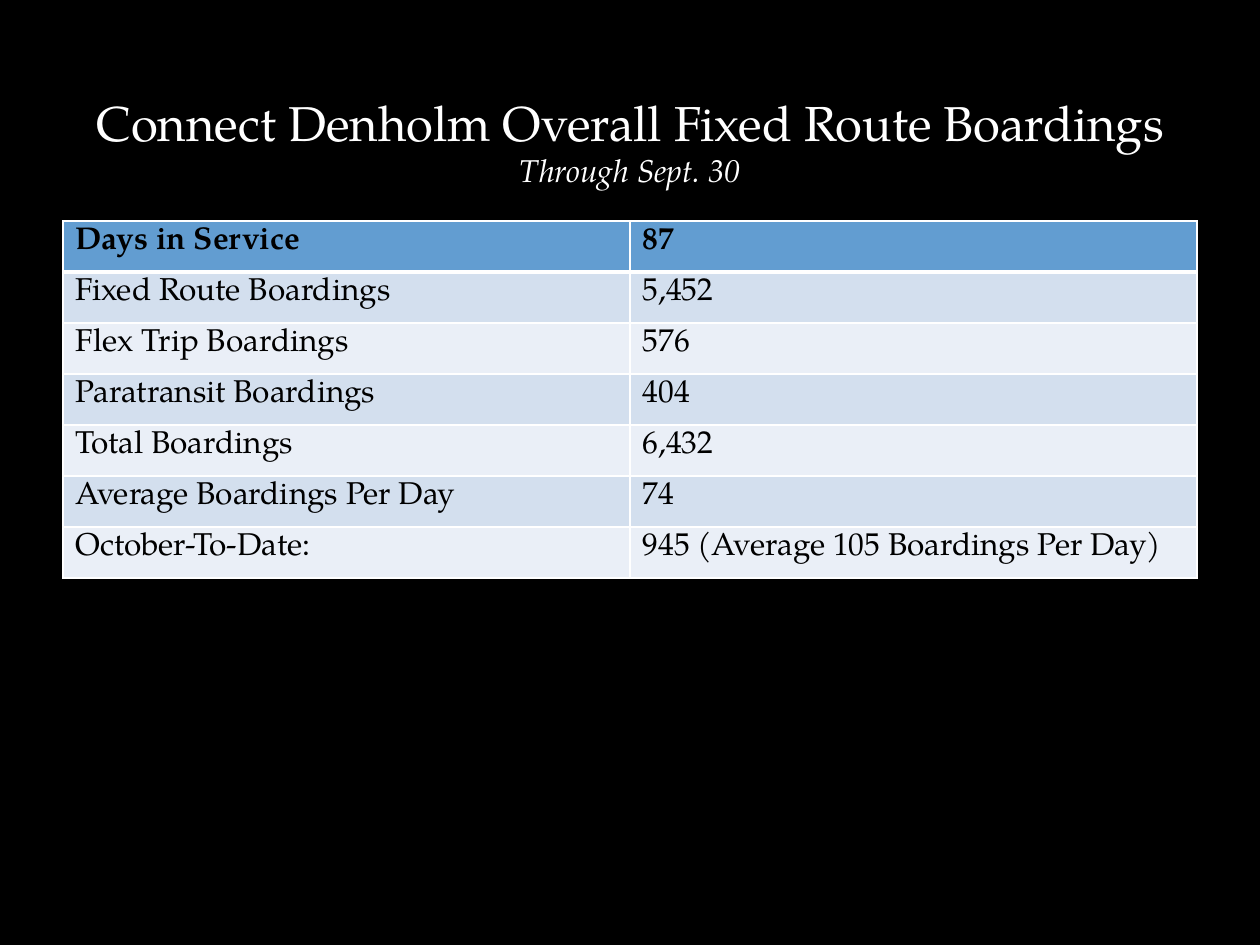
from lxml.etree import SubElement
from pptx import Presentation
from pptx.dml.color import RGBColor
from pptx.enum.text import MSO_ANCHOR, PP_ALIGN
from pptx.oxml.ns import qn
from pptx.util import Emu, Pt

FONT = "TeX Gyre Pagella"
BLACK, WHITE = "000000", "FFFFFF"
HEADER_FILL = "629DD1"
BAND_FILLS = ["D3DFEE", "EAEFF7"]

TITLE = "Connect Denholm Overall Fixed Route Boardings"
SUBTITLE = "Through Sept. 30"
BOARDINGS = [
    ("Days in Service", "87"),
    ("Fixed Route Boardings", "5,452"),
    ("Flex Trip Boardings", "576"),
    ("Paratransit Boardings", "404"),
    ("Total Boardings", "6,432"),
    ("Average Boardings Per Day", "74"),
    ("October-To-Date:", "945 (Average 105 Boardings Per Day)"),
]

SLIDE_WIDTH, SLIDE_HEIGHT = 1260, 945
MARGIN = 63
CONTENT_WIDTH = SLIDE_WIDTH - 2 * MARGIN
TITLE_TOP, TITLE_HEIGHT = 38, 157
TABLE_TOP, ROW_HEIGHT = 221, 51
CELL_PADDING = 6


def px(length):
    return Emu(round(length * 914400 / 126))


def color(hex_string):
    return RGBColor.from_string(hex_string)


def format_font(font, size, hex_string, bold=False, italic=False):
    font.name = FONT
    font.size = Pt(size)
    font.bold = bold
    font.italic = italic
    font.color.rgb = color(hex_string)


def set_borders(cell, widths):
    """Draw white borders; the lines must come before the fill in the XML."""
    properties = cell._tc.get_or_add_tcPr()
    for side, width in widths.items():
        line = SubElement(properties, qn(f"a:ln{side}"), w=str(Pt(width)))
        fill = SubElement(line, qn("a:solidFill"))
        SubElement(fill, qn("a:srgbClr"), val=WHITE)


def add_title(slide):
    title = slide.shapes.title
    title.left, title.top = px(MARGIN), px(TITLE_TOP)
    title.width, title.height = px(CONTENT_WIDTH), px(TITLE_HEIGHT)
    frame = title.text_frame
    frame.word_wrap = True
    frame.vertical_anchor = MSO_ANCHOR.BOTTOM
    frame.text = f"{TITLE}\v{SUBTITLE}"
    para = frame.paragraphs[0]
    para.alignment = PP_ALIGN.CENTER
    heading, period = para.runs
    format_font(heading.font, 28, WHITE)
    format_font(period.font, 18, WHITE, italic=True)


def add_boardings_table(slide):
    row_count, column_count = len(BOARDINGS), len(BOARDINGS[0])
    table = slide.shapes.add_table(
        row_count, column_count, px(MARGIN), px(TABLE_TOP),
        px(CONTENT_WIDTH), px(ROW_HEIGHT * row_count)).table
    for row, values in enumerate(BOARDINGS):
        is_header = row == 0
        for column, value in enumerate(values):
            cell = table.cell(row, column)
            cell.text = value
            cell.margin_top, cell.margin_bottom = px(CELL_PADDING), 0
            format_font(cell.text_frame.paragraphs[0].runs[0].font,
                        18, BLACK, bold=is_header)
            set_borders(cell, {"L": 1, "R": 1, "T": 3 if row == 1 else 1,
                               "B": 3 if is_header else 1})
            cell.fill.solid()
            cell.fill.fore_color.rgb = color(
                HEADER_FILL if is_header else BAND_FILLS[(row - 1) % 2])


def main():
    deck = Presentation()
    deck.slide_width, deck.slide_height = px(SLIDE_WIDTH), px(SLIDE_HEIGHT)
    slide = deck.slides.add_slide(deck.slide_layouts.get_by_name("Title Only"))
    slide.background.fill.solid()
    slide.background.fill.fore_color.rgb = color(BLACK)
    add_title(slide)
    add_boardings_table(slide)
    deck.save("out.pptx")


if __name__ == "__main__":
    main()
